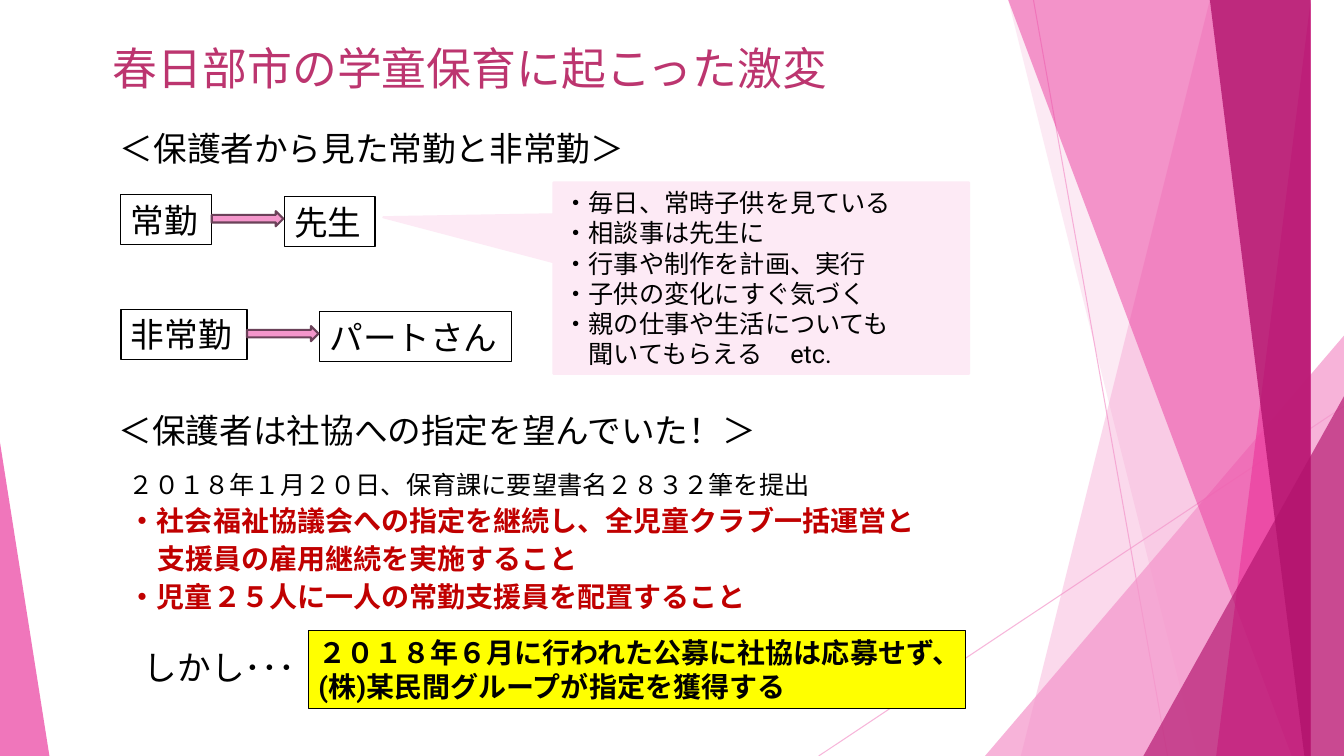
import pptx
import pptx.util
import pptx.dml.color
import pptx.enum.shapes
import pptx.enum.text
import pptx.oxml
import pptx.oxml.ns

WIDTH, HEIGHT = 13.33, 7.5
LATIN, JAPANESE = "Roboto", "Noto Sans CJK JP"
BLACK, RED, PINK, ROSE, WINE = "000000", "C00000", "F496CB", "EB3D9F", "B2136D"
SHAPE = pptx.enum.shapes.MSO_SHAPE

RAYS = [((10.25, 0), (11.58, HEIGHT)), ((WIDTH, 4.03), (8.12, HEIGHT))]
FACETS = [
    ("slab", (12.28, 10.04), PINK, 36),
    ("slab", (10.5, 11.83), PINK, 20),
    ("wedge", (9.77, 3.33, 3.56, 1), PINK, 72),
    ("slab", (10.21, 12.91), ROSE, 50),
    ("slab", (13.03, 11.92), ROSE, 70),
    ("slab", (11.96, 13.18), WINE, 80),
    ("wedge", (11.34, 3.93, 1.99, 1), WINE, 66),
    ("wedge", (0, 4.39, 0.49, 0), ROSE, 70),
]

TITLE = "春日部市の学童保育に起こった激変"
HEADINGS = [
    ("＜保護者から見た常勤と非常勤＞", (1.09, 1.22, 5.77, 0.5)),
    ("＜保護者は社協への指定を望んでいた！＞", (1.08, 4.02, 7.16, 0.5)),
    ("しかし･･･", (1.33, 6.37, 2.3, 0.5)),
]
STAFF_ROWS = [
    (1.93, ("常勤", 0.9), ("先生", 0.9)),
    (3.07, ("非常勤", 1.25), ("パートさん", 1.9)),
]
STAFF_LEFT, BOX_HEIGHT, ARROW_LENGTH, ARROW_HEIGHT = 1.2, 0.5, 0.71, 0.15

TEACHER_POINTS = [
    "・毎日、常時子供を見ている",
    "・相談事は先生に",
    "・行事や制作を計画、実行",
    "・子供の変化にすぐ気づく",
    "・親の仕事や生活についても",
    "聞いてもらえる\tetc.",
]
REQUEST_LEAD = "２０１８年１月２０日、保育課に要望書名２８３２筆を提出"
REQUESTS = [
    "・社会福祉協議会への指定を継続し、全児童クラブ一括運営と",
    "支援員の雇用継続を実施すること",
    "・児童２５人に一人の常勤支援員を配置すること",
]
OUTCOME = [
    "２０１８年６月に行われた公募に社協は応募せず、",
    "(株)某民間グループが指定を獲得する",
]


def rgb(value):
    return pptx.dml.color.RGBColor.from_string(value)


def inches(*values):
    return [pptx.util.Inches(value) for value in values]


def add_xml(parent, tag, **attributes):
    element = pptx.oxml.parse_xml(f"<a:{tag} {pptx.oxml.ns.nsdecls('a')}/>")
    for name, value in attributes.items():
        element.set(name, str(value))
    parent.append(element)
    return element


def set_alpha(shape, percent):
    colour = next(shape._element.spPr.iter(pptx.oxml.ns.qn("a:srgbClr")))
    add_xml(colour, "alpha", val=percent * 1000)


def paint(shape, fill=None, line=None, weight=0.75):
    shape.shadow.inherit = False
    if fill:
        shape.fill.solid()
        shape.fill.fore_color.rgb = rgb(fill)
    else:
        shape.fill.background()
    if line:
        shape.line.color.rgb = rgb(line)
        shape.line.width = pptx.util.Pt(weight)
    else:
        shape.line.fill.background()


def style(paragraph, size, colour=BLACK, bold=False, latin=LATIN):
    paragraph.alignment = pptx.enum.text.PP_ALIGN.LEFT
    font = paragraph.font
    font.size, font.bold, font.name = pptx.util.Pt(size), bold, latin
    font.color.rgb = rgb(colour)
    properties = paragraph._p.get_or_add_pPr()
    properties.find(pptx.oxml.ns.qn("a:defRPr")).find(
        pptx.oxml.ns.qn("a:latin")).addnext(
        add_xml(properties.find(pptx.oxml.ns.qn("a:defRPr")), "ea", typeface=JAPANESE))


def indent(paragraph, distance):
    properties = paragraph._p.get_or_add_pPr()
    properties.set("marL", str(pptx.util.Inches(distance)))
    properties.set("indent", "0")


def write(shape, lines, size, colour=BLACK, bold=False, middle=False):
    frame = shape.text_frame
    frame.word_wrap = True
    anchor = pptx.enum.text.MSO_ANCHOR
    frame.vertical_anchor = anchor.MIDDLE if middle else anchor.TOP
    frame.text = "\n".join(lines)
    for paragraph in frame.paragraphs:
        style(paragraph, size, colour, bold)
    return frame.paragraphs


def add_backdrop(shapes):
    for start, end in RAYS:
        ray = shapes.add_connector(
            pptx.enum.shapes.MSO_CONNECTOR.STRAIGHT, *inches(*start, *end))
        ray.line.color.rgb = rgb(PINK)
        ray.line.width = pptx.util.Pt(0.75)
        set_alpha(ray, 70)
        add_xml(ray._element.spPr, "effectLst")
    for kind, geometry, colour, alpha in FACETS:
        if kind == "slab":
            top_x, bottom_x = geometry
            builder = shapes.build_freeform(top_x, 0, scale=pptx.util.Inches(1))
            builder.add_line_segments(
                [(WIDTH, 0), (WIDTH, HEIGHT), (bottom_x, HEIGHT)], close=True)
            facet = builder.convert_to_shape()
        else:
            left, top, width, apex = geometry
            facet = shapes.add_shape(
                SHAPE.ISOSCELES_TRIANGLE, *inches(left, top, width, HEIGHT - top))
            facet.adjustments[0] = apex
        paint(facet, colour)
        set_alpha(facet, alpha)


def add_staff_row(shapes, top, role, name):
    left = STAFF_LEFT
    for (label, width), drop in ((role, 0), (name, 0.02)):
        box = shapes.add_shape(
            SHAPE.RECTANGLE, *inches(left, top + drop, width, BOX_HEIGHT))
        paint(box, line=BLACK)
        write(box, [label], 24)
        left += width + ARROW_LENGTH + 0.01
    arrow_top = top + (BOX_HEIGHT - ARROW_HEIGHT) / 2 - 0.01
    arrow = shapes.add_shape(SHAPE.RIGHT_ARROW, *inches(
        STAFF_LEFT + role[1], arrow_top, ARROW_LENGTH, ARROW_HEIGHT))
    paint(arrow, PINK, "6B4259", 1.5)


def main():
    presentation = pptx.Presentation()
    presentation.slide_width, presentation.slide_height = inches(WIDTH, HEIGHT)
    slide = presentation.slides.add_slide(presentation.slide_layouts[5])
    shapes = slide.shapes

    title = shapes.title
    title.left, title.top, title.width, title.height = inches(1.02, 0.35, 8.6, 0.64)
    style(write(title, [TITLE], 32)[0], 32, "BC356F", latin=JAPANESE)
    title.text_frame.auto_size = pptx.enum.text.MSO_AUTO_SIZE.NONE

    add_backdrop(shapes)
    for text, place in HEADINGS:
        write(shapes.add_textbox(*inches(*place)), [text], 24)
    for top, role, name in STAFF_ROWS:
        add_staff_row(shapes, top, role, name)

    callout = shapes.add_shape(
        SHAPE.RECTANGULAR_CALLOUT, *inches(5.49, 1.81, 4.12, 1.9))
    callout.adjustments[0], callout.adjustments[1] = -0.91, -0.318
    paint(callout, "FDEAF5", "FDEAF5", 1.5)
    last_point = write(callout, TEACHER_POINTS, 18, middle=True)[-1]
    indent(last_point, 0.25)
    tabs = add_xml(last_point._p.pPr, "tabLst")
    add_xml(tabs, "tab", pos=pptx.util.Inches(2.54), algn="l")
    last_point._p.pPr.find(pptx.oxml.ns.qn("a:defRPr")).addprevious(tabs)

    request_box = shapes.add_textbox(*inches(1.18, 4.53, 8.29, 1.61))
    paragraphs = write(request_box, [REQUEST_LEAD] + REQUESTS, 20, RED, True)
    style(paragraphs[0], 18)
    for paragraph in paragraphs:
        paragraph.line_spacing = pptx.util.Pt(27)
    indent(paragraphs[2], 0.28)

    outcome = shapes.add_shape(SHAPE.RECTANGLE, *inches(3.06, 6.26, 6.52, 0.77))
    paint(outcome, "FFFF00", BLACK)
    write(outcome, OUTCOME, 20, bold=True)

    presentation.save("out.pptx")


if __name__ == "__main__":
    main()
